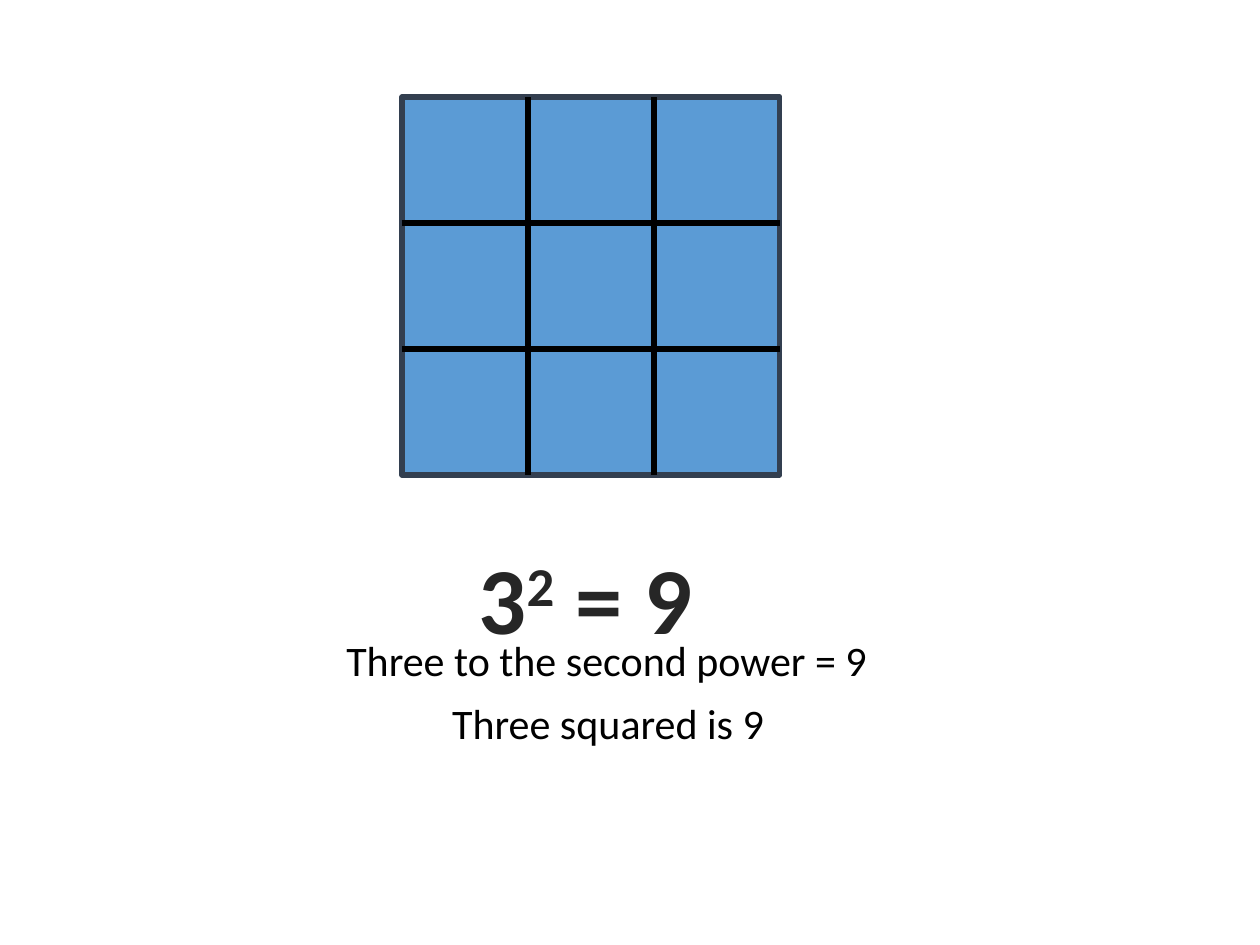
from dataclasses import dataclass

from lxml.etree import SubElement
from pptx import Presentation
from pptx.dml.color import RGBColor
from pptx.enum.shapes import MSO_CONNECTOR, MSO_SHAPE
from pptx.enum.text import MSO_AUTO_SIZE, PP_ALIGN
from pptx.oxml.ns import qn
from pptx.slide import Slide
from pptx.util import Inches, Pt

GRID_LEFT, GRID_TOP = 3.19, 0.77
CELL = 1
COUNT = 3
SIDE = CELL * COUNT


@dataclass(frozen=True)
class Segment:
    start_x: float
    start_y: float
    end_x: float
    end_y: float


@dataclass(frozen=True)
class Caption:
    text: str
    left: float
    top: float
    width: float


CAPTIONS = [
    Caption("Three to the second power = 9", 2.65, 4.99, 4.37),
    Caption("Three squared is 9", 3.49, 5.49, 2.7),
]


def color(value: str) -> RGBColor:
    return RGBColor.from_string(value)


def add_span(para, text: str, *, size: float, fill: str, bold: bool = False,
             baseline: int = 0) -> None:
    span = para.add_run()
    span.text = text
    span.font.name = "Calibri"
    span.font.size = Pt(size)
    span.font.bold = bold
    span.font.color.rgb = color(fill)
    if baseline:
        span._r.get_or_add_rPr().set("baseline", str(baseline * 1000))


def add_box(page: Slide, left: float, top: float, width: float, height: float,
            align: PP_ALIGN = PP_ALIGN.LEFT):
    box = page.shapes.add_textbox(Inches(left), Inches(top), Inches(width), Inches(height))
    box.text_frame.word_wrap = False
    box.text_frame.auto_size = MSO_AUTO_SIZE.SHAPE_TO_FIT_TEXT
    para = box.text_frame.paragraphs[0]
    para.alignment = align
    return para


def add_square(page: Slide) -> None:
    square = page.shapes.add_shape(MSO_SHAPE.RECTANGLE, Inches(GRID_LEFT), Inches(GRID_TOP),
                                   Inches(SIDE), Inches(SIDE))
    square.shadow.inherit = False
    square.fill.solid()
    square.fill.fore_color.rgb = color("5B9BD5")
    square.line.color.rgb = color("333F50")
    square.line.width = Pt(3)


def add_line(page: Slide, segment: Segment) -> None:
    line = page.shapes.add_connector(
        MSO_CONNECTOR.STRAIGHT, Inches(segment.start_x), Inches(segment.start_y),
        Inches(segment.end_x), Inches(segment.end_y))
    line.line.color.rgb = color("000000")
    line.line.width = Pt(3)
    SubElement(line._element.spPr, qn("a:effectLst"))


def grid_segments() -> list[Segment]:
    right, bottom = GRID_LEFT + SIDE, GRID_TOP + SIDE
    offsets = [CELL * step for step in range(1, COUNT)]
    rows = [Segment(GRID_LEFT, GRID_TOP + offset, right, GRID_TOP + offset)
            for offset in offsets]
    columns = [Segment(GRID_LEFT + offset, bottom, GRID_LEFT + offset, GRID_TOP)
               for offset in offsets]
    return rows + columns


def add_equation(page: Slide) -> None:
    para = add_box(page, 3.67, 4.24, 1.95, 1.01, PP_ALIGN.CENTER)
    for text, baseline in [("3", 0), ("2", 30), (" = 9", 0)]:
        add_span(para, text, size=54, fill="262626", bold=True, baseline=baseline)


def main() -> None:
    deck = Presentation()
    deck.slide_width, deck.slide_height = Inches(10), Inches(7.5)
    page = deck.slides.add_slide(deck.slide_layouts.get_by_name("Blank"))
    add_square(page)
    for segment in grid_segments():
        add_line(page, segment)
    add_equation(page)
    for caption in CAPTIONS:
        para = add_box(page, caption.left, caption.top, caption.width, 0.5)
        add_span(para, caption.text, size=24, fill="000000")
    deck.save("out.pptx")


if __name__ == "__main__":
    main()
